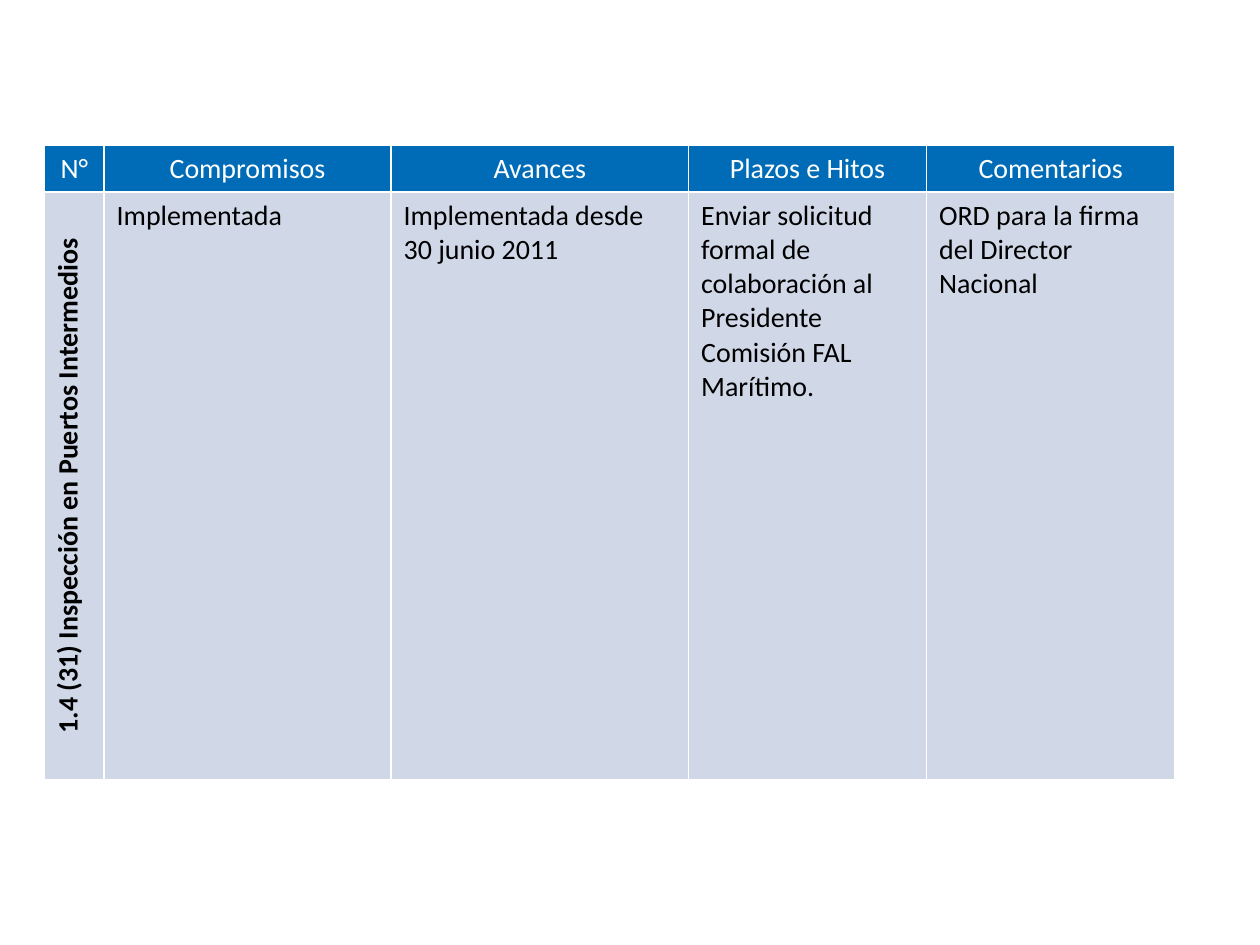
from dataclasses import dataclass

from lxml.etree import SubElement
from pptx import Presentation
from pptx.dml.color import RGBColor as Rgb
from pptx.enum.text import PP_ALIGN as Align
from pptx.oxml.ns import qn
from pptx.util import Pt


@dataclass(frozen=True)
class Theme:
    font: str = "Calibri"
    size: float = 16
    line: float = 1
    white: str = "FFFFFF"
    black: str = "000000"
    blue: str = "006CB7"
    pale: str = "D0D8E8"


@dataclass(frozen=True)
class Style:
    fill: str
    ink: str
    bold: bool = False
    align: Align = Align.LEFT
    turn: bool = False


@dataclass(frozen=True)
class Column:
    width: float
    head: str
    body: str
    style: Style


THEME = Theme()
HEAD = Style(THEME.blue, THEME.white, align=Align.CENTER)
BODY = Style(THEME.pale, THEME.black)
SIDE = Style(THEME.pale, THEME.black, True, Align.CENTER, True)

COLUMNS = [
    Column(34, "N°", "1.4 (31) Inspección en Puertos Intermedios", SIDE),
    Column(164, "Compromisos", "Implementada", BODY),
    Column(170, "Avances", "Implementada desde 30 junio 2011", BODY),
    Column(136, "Plazos e Hitos", "Enviar solicitud formal de colaboración al "
           "Presidente Comisión FAL Marítimo.", BODY),
    Column(142, "Comentarios", "ORD para la firma del Director Nacional", BODY),
]
ROWS = [26.5, 336]
LEFT, TOP = 25.5, 83


def add_edges(cell) -> None:
    """Draw the four borders; they must come before the cell's fill in the XML."""
    props = cell._tc.get_or_add_tcPr()
    for side in ("lnL", "lnR", "lnT", "lnB"):
        edge = SubElement(props, qn(f"a:{side}"), w=str(Pt(THEME.line)))
        paint = SubElement(edge, qn("a:solidFill"))
        SubElement(paint, qn("a:srgbClr"), val=THEME.white)


def fill_cell(cell, text: str, style: Style) -> None:
    add_edges(cell)
    cell.fill.solid()
    cell.fill.fore_color.rgb = Rgb.from_string(style.fill)
    if style.turn:
        cell._tc.get_or_add_tcPr().set("vert", "vert270")
    para = cell.text_frame.paragraphs[0]
    para.alignment = style.align
    run = para.add_run()
    run.text = text
    run.font.name = THEME.font
    run.font.size = Pt(THEME.size)
    run.font.bold = style.bold
    run.font.color.rgb = Rgb.from_string(style.ink)


def add_grid(slide) -> None:
    width = sum(col.width for col in COLUMNS)
    frame = slide.shapes.add_table(len(ROWS), len(COLUMNS), Pt(LEFT), Pt(TOP),
                                   Pt(width), Pt(sum(ROWS)))
    table = frame.table
    for row, height in zip(table.rows, ROWS):
        row.height = Pt(height)
    for i, col in enumerate(COLUMNS):
        table.columns[i].width = Pt(col.width)
        fill_cell(table.cell(0, i), col.head, HEAD)
        fill_cell(table.cell(1, i), col.body, col.style)


def main() -> None:
    deck = Presentation()
    deck.slide_width, deck.slide_height = Pt(720), Pt(540)
    add_grid(deck.slides.add_slide(deck.slide_layouts[6]))
    deck.save("out.pptx")


if __name__ == "__main__":
    main()
